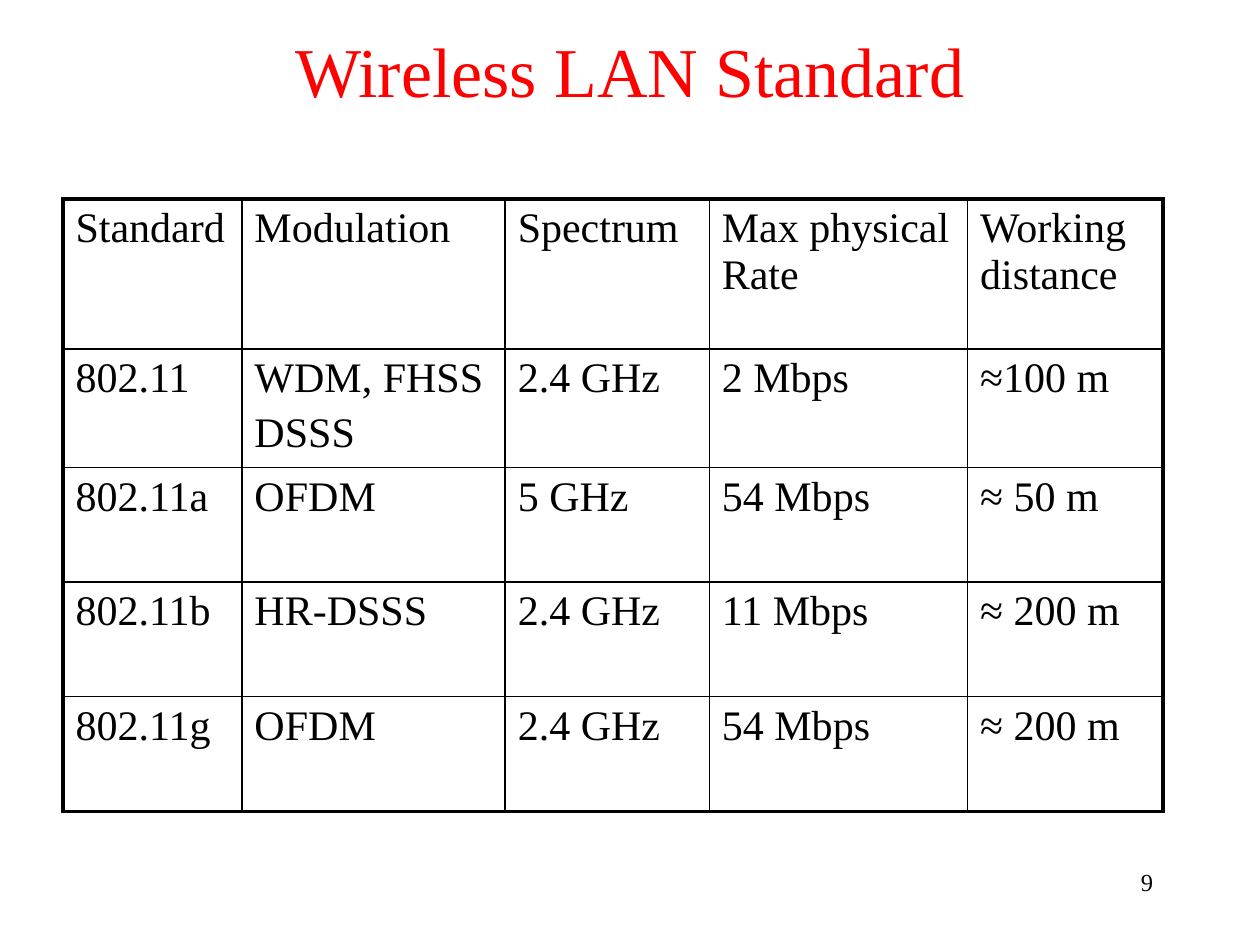
from pptx import Presentation
from pptx.dml.color import RGBColor
from pptx.enum.text import MSO_ANCHOR, PP_ALIGN
from pptx.oxml.ns import qn
from pptx.util import Inches, Pt
from lxml.etree import SubElement

FONT = "Times New Roman"
RED = RGBColor(0xFF, 0x00, 0x00)
BLACK = RGBColor(0x00, 0x00, 0x00)
WHITE = RGBColor(0xFF, 0xFF, 0xFF)
INNER_LINE, OUTER_LINE = Pt(1), Pt(2.25)

COLUMN_WIDTHS = [1.42, 2.09, 1.62, 2.05, 1.55]
ROW_HEIGHTS = [1.19, 0.94, 0.91, 0.91, 0.91]
STANDARDS = [
    ["Standard", "Modulation", "Spectrum", "Max physical Rate", "Working distance"],
    ["802.11", "WDM, FHSS\nDSSS", "2.4 GHz", "2 Mbps", "≈100 m"],
    ["802.11a", "OFDM", "5 GHz", "54 Mbps", "≈ 50 m"],
    ["802.11b", "HR-DSSS", "2.4 GHz", "11 Mbps", "≈ 200 m"],
    ["802.11g", "OFDM", "2.4 GHz", "54 Mbps", "≈ 200 m"],
]


def add_text(paragraph, text, size, color):
    run = paragraph.add_run()
    run.text = text
    run.font.name = FONT
    run.font.size = Pt(size)
    run.font.color.rgb = color


def set_borders(cell, widths):
    """Draw the borders; schema order puts them before the cell's fill."""
    properties = cell._tc.get_or_add_tcPr()
    for side, width in widths.items():
        line = SubElement(properties, qn(f"a:{side}"), w=str(width))
        fill = SubElement(line, qn("a:solidFill"))
        SubElement(fill, qn("a:srgbClr"), val=str(BLACK))


def place_title(slide, left, top, width, height):
    title = slide.shapes.title
    title.left, title.top, title.width, title.height = left, top, width, height
    frame = title.text_frame
    frame.vertical_anchor = MSO_ANCHOR.MIDDLE
    frame.paragraphs[0].alignment = PP_ALIGN.CENTER
    add_text(frame.paragraphs[0], "Wireless LAN Standard", 40, RED)


def fill_cell(cell, text):
    frame = cell.text_frame
    for index, line in enumerate(text.split("\n")):
        paragraph = frame.add_paragraph() if index else frame.paragraphs[0]
        paragraph.space_before = Pt(4.8)
        add_text(paragraph, line, 24, BLACK)


def place_standards(slide, left, top, width, height):
    rows, columns = len(STANDARDS), len(COLUMN_WIDTHS)
    table = slide.shapes.add_table(rows, columns, left, top, width, height).table
    table.first_row = table.horz_banding = False
    for column, column_width in zip(table.columns, COLUMN_WIDTHS):
        column.width = Inches(column_width)
    for row, row_height in zip(table.rows, ROW_HEIGHTS):
        row.height = Inches(row_height)

    for r, standard in enumerate(STANDARDS):
        for c, text in enumerate(standard):
            cell = table.cell(r, c)
            fill_cell(cell, text)
            # Heavier line around the outside of the table
            on_edge = {"lnL": c == 0, "lnR": c == columns - 1,
                       "lnT": r == 0, "lnB": r == rows - 1}
            set_borders(cell, {side: OUTER_LINE if edge else INNER_LINE
                               for side, edge in on_edge.items()})
            cell.fill.solid()
            cell.fill.fore_color.rgb = WHITE


def place_page_number(slide, left, top, width, height):
    frame = slide.shapes.add_textbox(left, top, width, height).text_frame
    frame.word_wrap = True
    frame.paragraphs[0].alignment = PP_ALIGN.RIGHT
    add_text(frame.paragraphs[0], "9", 14, BLACK)


def main():
    deck = Presentation()
    deck.slide_width, deck.slide_height = Inches(10), Inches(7.5)
    slide = deck.slides.add_slide(deck.slide_layouts[5])  # title only

    place_title(slide, Inches(0), Inches(0.21), Inches(10), Inches(0.68))
    place_standards(slide, Inches(0.5), Inches(1.58),
                    Inches(sum(COLUMN_WIDTHS)), Inches(sum(ROW_HEIGHTS)))
    place_page_number(slide, Inches(7.17), Inches(6.83), Inches(2.08), Inches(0.5))

    deck.save("out.pptx")


if __name__ == "__main__":
    main()
